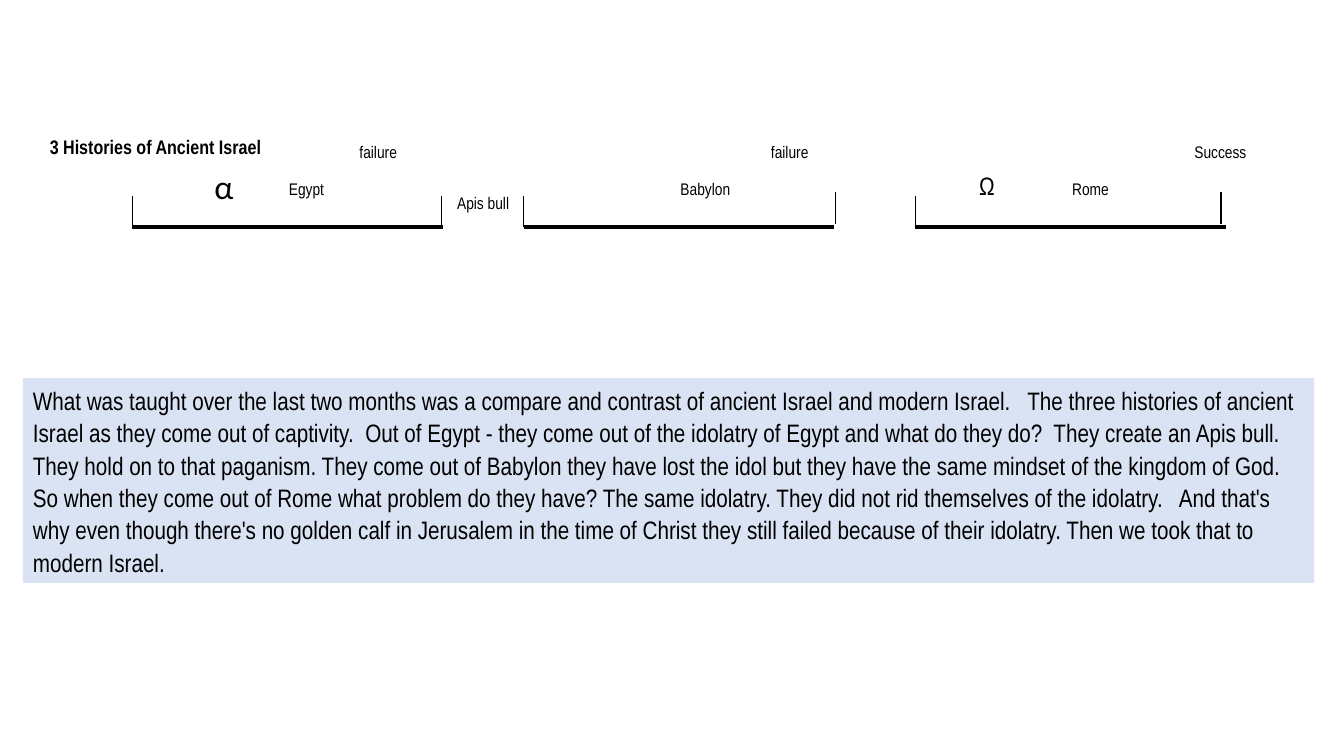
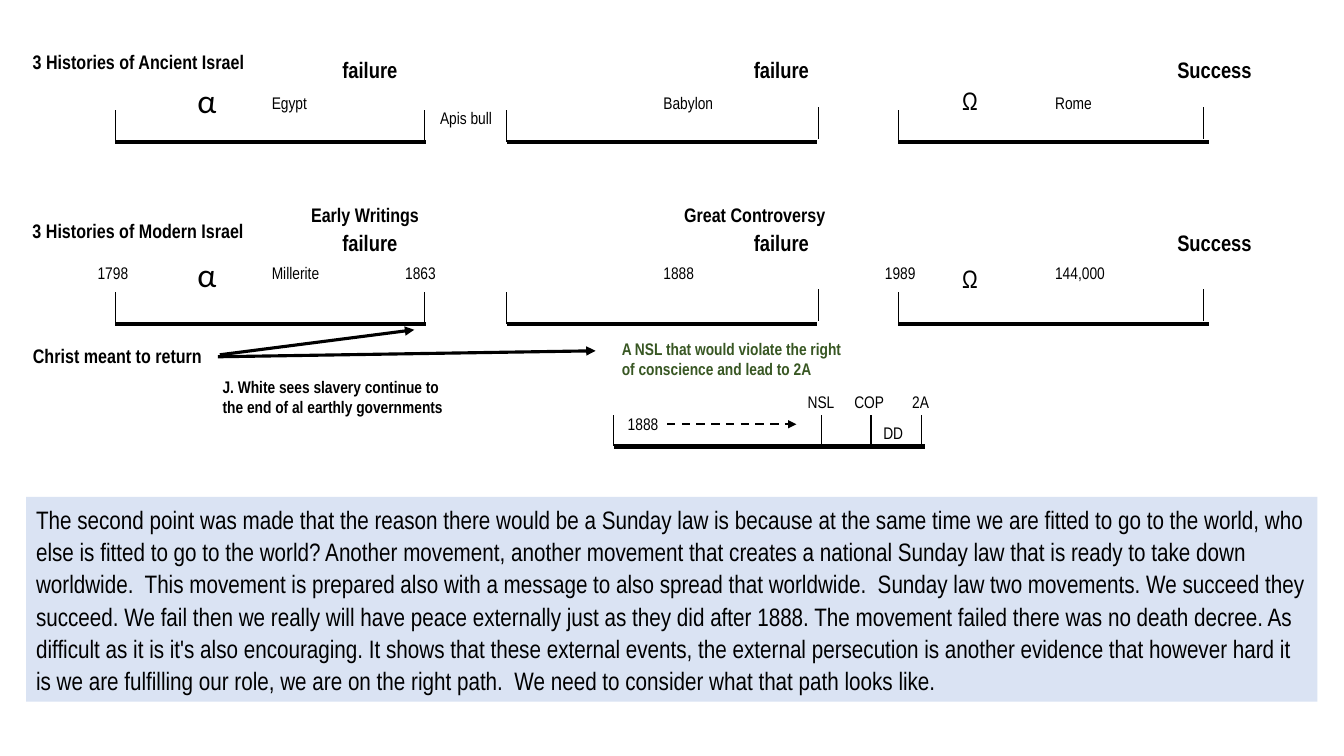
from dataclasses import dataclass
from typing import NamedTuple

from lxml import etree
from pptx import Presentation
from pptx.dml.color import RGBColor
from pptx.enum import dml, shapes as kinds, text
from pptx.oxml.ns import qn
from pptx.util import Cm, Pt


# Theme: colours, type styles and line weights
class Style(NamedTuple):
    size: float
    bold: bool = False
    color: str = "000000"
    font: str = "Arial Narrow"
    centred: bool = False
    spacing: float = 1.0


@dataclass(frozen=True)
class Theme:
    ink: str = "000000"
    panel: str = "DAE3F3"
    heading: Style = Style(14, bold=True)
    body: Style = Style(18, spacing=1.07)
    label: Style = Style(12)
    mark: Style = Style(12, centred=True)
    note: Style = Style(12, bold=True)
    law_note: Style = Style(12, bold=True, color="385723")
    outcome: Style = Style(16, bold=True)
    alpha: Style = Style(24, font="Calibri", centred=True)
    omega: Style = Style(18, centred=True)
    bar: float = 3
    arrow: float = 2.25
    dashed: float = 1.5
    tick: float = 0.75


THEME = Theme()

# Geometry of a row of histories, in centimetres
BAR = 7.83
PITCH = 9.87
TICK = 0.79
END_TICKS = ((7.8, 0), (7.85, 0.08), (7.7, 0.08))  # offset from bar start, lift
NAME_X = 3.7
OUTCOME_X = (5.48, 15.85, 26.52)
OUTCOMES = ("failure", "failure", "Success")


class Label(NamedTuple):
    text: str
    x: float
    y: float
    w: float
    h: float = 0.77
    style: Style = THEME.label


class Stroke(NamedTuple):
    x1: float
    y1: float
    x2: float
    y2: float
    weight: float = THEME.tick
    arrow: bool = False
    dashed: bool = False


@dataclass(frozen=True)
class HistoryRow:
    heading: str
    names: tuple[str, str, str]
    x: float
    base: float
    heading_y: float
    outcome_y: float
    name_y: float
    alpha_y: float
    omega_y: float
    outcome_style: Style = THEME.outcome
    between: str = ""  # label between the first two bars


ANCIENT_NAMES = ("Egypt", "Babylon", "Rome")
ANCIENT_ALONE = HistoryRow(
    "3 Histories of Ancient Israel", ANCIENT_NAMES, x=3.33, base=5.72,
    heading_y=3.28, outcome_y=3.45, name_y=4.37, alpha_y=4.06, omega_y=4.17,
    outcome_style=THEME.label, between="Apis bull")
ANCIENT = HistoryRow(
    "3 Histories of Ancient Israel", ANCIENT_NAMES, x=2.9, base=3.57,
    heading_y=1.12, outcome_y=1.3, name_y=2.22, alpha_y=1.9, omega_y=2.03,
    between="Apis bull")
MODERN = HistoryRow(
    "3 Histories of Modern Israel", ("Millerite", "1888", "144,000"),
    x=2.9, base=8.16, heading_y=5.38, outcome_y=5.66, name_y=6.5,
    alpha_y=6.27, omega_y=6.5)

ANCIENT_TEXT = (
    "What was taught over the last two months was a compare and contrast of "
    "ancient Israel and modern Israel.   The three histories of ancient Israel "
    "as they come out of captivity.  Out of Egypt - they come out of the "
    "idolatry of Egypt and what do they do?  They create an Apis bull. They "
    "hold on to that paganism. They come out of Babylon they have lost the "
    "idol but they have the same mindset of the kingdom of God.   So when they "
    "come out of Rome what problem do they have? The same idolatry. They did "
    "not rid themselves of the idolatry.   And that's why even though there's "
    "no golden calf in Jerusalem in the time of Christ they still failed "
    "because of their idolatry. Then we took that to modern Israel.")
MODERN_TEXT = (
    "The second point was made that the reason there would be a Sunday law is "
    "because at the same time we are fitted to go to the world, who else is "
    "fitted to go to the world? Another movement, another movement that "
    "creates a national Sunday law that is ready to take down worldwide.  This "
    "movement is prepared also with a message to also spread that worldwide.  "
    "Sunday law two movements. We succeed they succeed. We fail then we really "
    "will have peace externally just as they did after 1888. The movement "
    "failed there was no death decree. As difficult as it is it's also "
    "encouraging. It shows that these external events, the external "
    "persecution is another evidence that however hard it is we are fulfilling "
    "our role, we are on the right path.  We need to consider what that path "
    "looks like.")

# Labels and arrows around the modern row
MODERN_LABELS = (
    Label("1798", 2.21, 6.5, 1.45),
    Label("1863", 9.96, 6.5, 1.45),
    Label("1989", 22.05, 6.5, 1.45),
    Label("Early Writings", 7.59, 4.98, 3.86, 0.86, THEME.heading),
    Label("Great Controversy", 16.99, 4.98, 4.62, 0.86, THEME.heading),
    Label("Christ meant to return", 0.58, 8.53, 5.41, 0.86, THEME.heading),
    Label("J. White sees slavery continue to the end of al earthly governments",
          5.36, 9.37, 6.1, 1.28, THEME.note),
    Label("A NSL that would violate the right of conscience and lead to 2A",
          15.42, 8.41, 6.15, 1.28, THEME.law_note),
)
RETURN_ARROWS = (
    Stroke(5.54, 8.94, 10.44, 8.31, THEME.arrow, arrow=True),
    Stroke(5.49, 8.99, 15.01, 8.84, THEME.arrow, arrow=True),
)

# Small timeline from 1888 to 2A
LAW_BASE = 11.25
LAW_TICKS = (15.47, 20.7, 21.95, 23.22)
LAW_STROKES = (
    Stroke(15.47, LAW_BASE, 15.47 + BAR, LAW_BASE, THEME.bar),
    *(Stroke(x, LAW_BASE - TICK, x, LAW_BASE) for x in LAW_TICKS),
    Stroke(16.81, 10.69, 20.07, 10.69, THEME.dashed, arrow=True, dashed=True),
)
LAW_LABELS = (
    Label("1888", 15.57, 10.31, 1.83),
    Label("NSL", 20.07, 9.75, 1.24, style=THEME.mark),
    Label("COP", 21.23, 9.75, 1.35, style=THEME.mark),
    Label("2A", 22.58, 9.75, 1.24, style=THEME.mark),
    Label("DD", 21.89, 10.54, 1.24, style=THEME.mark),
)


def rgb(color: str) -> RGBColor:
    return RGBColor.from_string(color)


def write(sp, label: Label) -> None:
    """Place a text shape and format its single paragraph."""
    sp.left, sp.top, sp.width, sp.height = (Cm(v) for v in label[1:5])
    style = label.style
    tf = sp.text_frame
    tf.text = label.text
    tf.word_wrap = True
    tf.auto_size = text.MSO_AUTO_SIZE.SHAPE_TO_FIT_TEXT
    tf.vertical_anchor = text.MSO_ANCHOR.TOP
    p = tf.paragraphs[0]
    p.alignment = text.PP_ALIGN.CENTER if style.centred else text.PP_ALIGN.LEFT
    p.line_spacing = style.spacing
    font = p.runs[0].font
    font.name, font.size, font.bold = style.font, Pt(style.size), style.bold
    font.color.rgb = rgb(style.color)


def add_label(shapes, label: Label):
    sp = shapes.add_textbox(*(Cm(v) for v in label[1:5]))
    write(sp, label)
    return sp


def add_stroke(shapes, stroke: Stroke) -> None:
    c = shapes.add_connector(kinds.MSO_CONNECTOR.STRAIGHT,
                             *(Cm(v) for v in stroke[:4]))
    c.line.color.rgb = rgb(THEME.ink)
    c.line.width = Pt(stroke.weight)
    if stroke.dashed:
        c.line.dash_style = dml.MSO_LINE.DASH
    properties = c.element.spPr
    if stroke.arrow:
        etree.SubElement(properties.find(qn("a:ln")), qn("a:tailEnd"),
                         type="triangle")
    etree.SubElement(properties, qn("a:effectLst"))


def add_panel(shapes, body: str, x: float, y: float) -> None:
    sp = add_label(shapes, Label(body, x, y, 32.54, 5.16, THEME.body))
    sp.fill.solid()
    sp.fill.fore_color.rgb = rgb(THEME.panel)


def add_history_row(shapes, row: HistoryRow, title=None) -> None:
    """Draw three bars with their labels; the heading may fill a title."""
    heading = Label(row.heading, row.x - 2.33, row.heading_y, 6.22, 0.86,
                    THEME.heading)
    if title is None:
        add_label(shapes, heading)
    else:
        write(title, heading)

    for i, (name, (end, lift)) in enumerate(zip(row.names, END_TICKS)):
        x = row.x + i * PITCH
        bottom = row.base - lift
        add_stroke(shapes, Stroke(x, row.base, x + BAR, row.base, THEME.bar))
        add_stroke(shapes, Stroke(x, row.base - TICK, x, row.base))
        add_stroke(shapes, Stroke(x + end, bottom - TICK, x + end, bottom))
        add_label(shapes, Label(name, x + NAME_X, row.name_y, 3.68))
        add_label(shapes, Label(OUTCOMES[i], row.x + OUTCOME_X[i],
                                row.outcome_y, 2.64, 0.94, row.outcome_style))

    add_label(shapes, Label("α", row.x + 1.72, row.alpha_y, 1.19, 1.27,
                            THEME.alpha))
    add_label(shapes, Label("Ω", row.x + 20.95, row.omega_y, 1.19, 1.02,
                            THEME.omega))
    if row.between:
        add_label(shapes, Label(row.between, row.x + 7.94, row.base - 0.98, 1.95))


def add_slide(prs, row: HistoryRow, body: str, x: float, y: float):
    """Start a slide with its panel and its titled row of histories."""
    s = prs.slides.add_slide(prs.slide_layouts[5])
    add_panel(s.shapes, body, x, y)
    add_history_row(s.shapes, row, s.shapes.title)
    return s


def main() -> None:
    prs = Presentation()
    prs.slide_width, prs.slide_height = Cm(33.87), Cm(19.05)

    # Ancient Israel
    add_slide(prs, ANCIENT_ALONE, ANCIENT_TEXT, 0.58, 9.53)

    # Ancient and modern Israel
    s = add_slide(prs, ANCIENT, MODERN_TEXT, 0.66, 12.52)
    add_history_row(s.shapes, MODERN)
    timeline = s.shapes.add_group_shape()
    for shapes, strokes, labels in (
            (s.shapes, RETURN_ARROWS, MODERN_LABELS),
            (timeline.shapes, LAW_STROKES, LAW_LABELS)):
        for stroke in strokes:
            add_stroke(shapes, stroke)
        for label in labels:
            add_label(shapes, label)

    prs.save("out.pptx")


if __name__ == "__main__":
    main()
